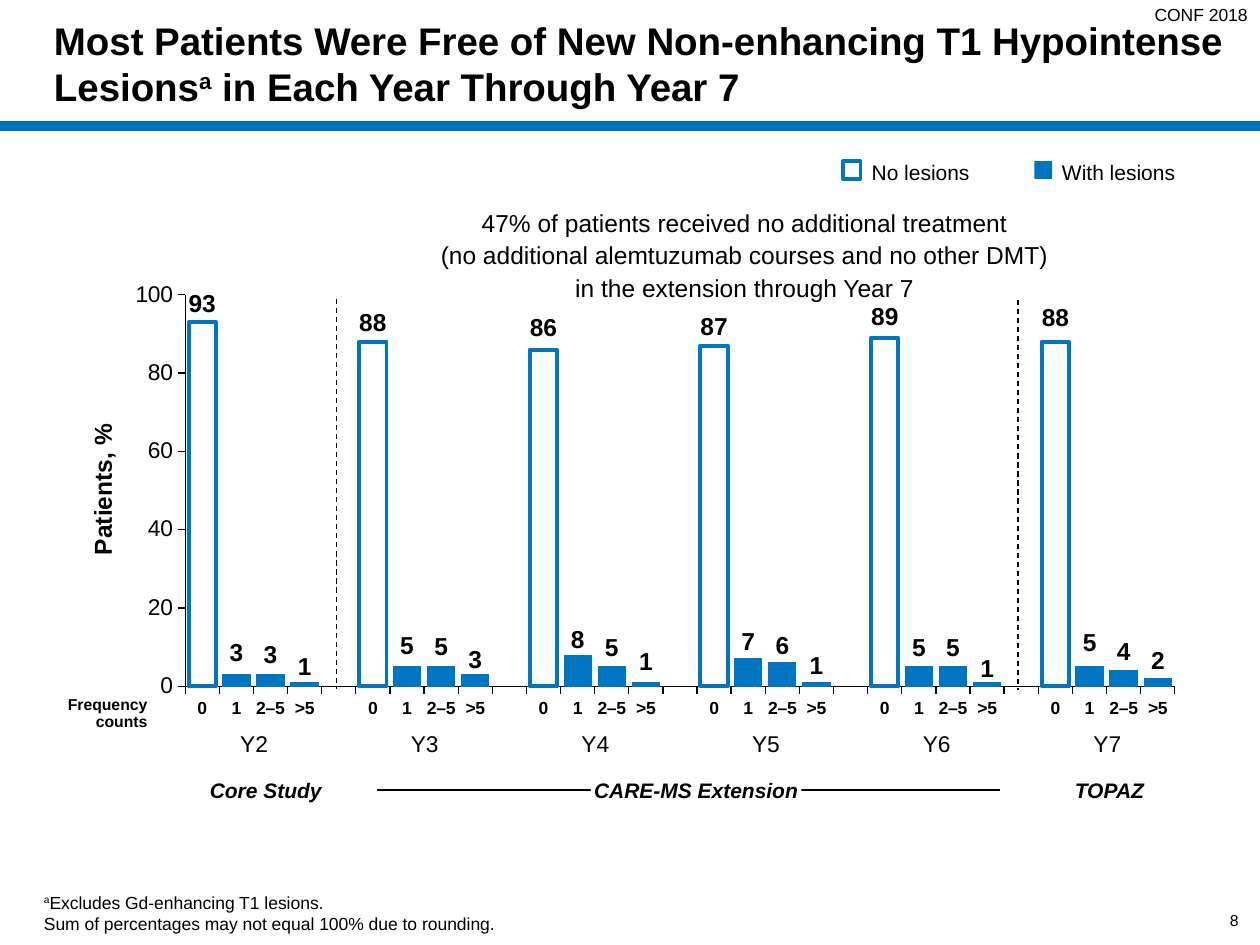
"""Build a slide charting patients free of new T1 hypointense lesions by year."""
from copy import deepcopy
from typing import NamedTuple

from lxml import etree
from pptx import Presentation, util as u
from pptx.chart.data import CategoryChartData
from pptx.dml.color import RGBColor
from pptx.enum import chart as ch, dml, shapes, text
from pptx.oxml.ns import qn

HUES = {"ink": "000000", "paper": "FFFFFF", "bar": "0076C0", "rule": "0070C0"}
FACE = "Arial"
LEFT, PITCH, BASE = 1.47, 0.27086, 5.45
ALIGN = {"l": text.PP_ALIGN.LEFT, "c": text.PP_ALIGN.CENTER, "r": text.PP_ALIGN.RIGHT}
ANCHOR = {"t": text.MSO_ANCHOR.TOP, "m": text.MSO_ANCHOR.MIDDLE, "b": text.MSO_ANCHOR.BOTTOM}


class Box(NamedTuple):
    x: float
    y: float
    w: float
    h: float


class Year(NamedTuple):
    name: str
    vals: tuple
    tops: tuple


class Note(NamedTuple):
    words: str
    box: Box
    size: float
    align: str = "l"
    anchor: str = "t"
    bold: bool = False
    slant: bool = False
    side: float = 0.1
    edge: float = 0.05
    lead: float = 1.0
    turn: int = 0
    fill: str = ""


class Rule(NamedTuple):
    x1: float
    y1: float
    x2: float
    y2: float
    hue: str = "ink"
    width: float = 0.75
    dash: bool = False


YEARS = (
    Year("Y2", (93, 3, 3, 1), (2.24, 5.01, 5.02, 5.12)),
    Year("Y3", (88, 5, 5, 3), (2.39, 4.95, 4.96, 5.06)),
    Year("Y4", (86, 8, 5, 1), (2.43, 4.9, 4.97, 5.08)),
    Year("Y5", (87, 7, 6, 1), (2.42, 4.92, 4.95, 5.11)),
    Year("Y6", (89, 5, 5, 1), (2.34, 4.97, 4.97, 5.13)),
    Year("Y7", (88, 5, 4, 2), (2.35, 4.93, 5.0, 5.07)),
)
COUNTS = ("0", "1", "2–5", ">5")

NOTES = (
    Note("47% of patients received no additional treatment\n"
         "(no additional alemtuzumab courses and no other DMT)\n"
         "in the extension through Year 7", Box(3.26, 1.58, 5.3, 0.9), 14, "c", lead=1.1),
    Note("Most Patients Were Free of New Non-enhancing T1 Hypointense "
         "Lesions^a^ in Each Year Through Year 7", Box(0.33, 0, 9.51, 1), 22,
         anchor="m", bold=True),
    Note("8", Box(7.5, 7.1, 2.33, 0.4), 9, "r", "m", side=0, edge=0),
    Note("CONF 2018", Box(8.43, -0.02, 1.57, 0.27), 10, "r"),
    Note("Frequency\ncounts", Box(0.3, 5.48, 0.87, 0.37), 9, "r", bold=True, side=0, lead=0.9),
    Note("^a^Excludes Gd-enhancing T1 lesions.\n"
         "Sum of percentages may not equal 100% due to rounding.",
         Box(0.25, 7.02, 9.42, 0.44), 10, anchor="b"),
    Note("With lesions", Box(8.33, 1.2, 1.32, 0.31), 12, lead=1.1),
    Note("No lesions", Box(6.82, 1.2, 1.27, 0.31), 12, lead=1.1),
    Note("Patients, %", Box(-0.21, 3.73, 2.07, 0.31), 14, "c", bold=True, side=0,
         lead=0.9, turn=270),
)
STUDIES = (("Core Study", 1.61, 1.0, ""), ("TOPAZ", 8.51, 0.59, "paper"),
           ("CARE-MS Extension", 4.69, 1.67, "paper"))
RULES = (
    Rule(0, 1, 10, 1, "rule", 5.75),
    Rule(2.67, 2.37, 2.67, 5.47, dash=True),
    Rule(8.08, 2.38, 8.08, 5.48, dash=True),
    Rule(2.99, 6.27, 7.94, 6.27),
)


def tint(hue: str) -> RGBColor:
    """Return the named colour."""
    return RGBColor.from_string(HUES[hue])


def span(box: Box) -> list:
    """Return the box in slide lengths."""
    return [u.Inches(v) for v in box]


def assign(item, style: dict) -> None:
    """Set each attribute in the style."""
    for key, val in style.items():
        setattr(item, key, val)


def paint(item, fill: str, line: str = "", width: float = 0) -> None:
    """Give an item a solid fill and an optional line."""
    item.fill.solid()
    item.fill.fore_color.rgb = tint(fill)
    if line:
        item.line.color.rgb = tint(line)
        item.line.width = u.Pt(width)
    else:
        item.line.fill.background()


def ink(font, size: float, bold: bool = False, slant: bool = False) -> None:
    """Style a font."""
    assign(font, {"name": FACE, "size": u.Pt(size), "bold": bold, "italic": slant})
    font.color.rgb = tint("ink")


def write(slide, note: Note) -> None:
    """Add a text box, raising the parts between carets."""
    shape = slide.shapes.add_textbox(*span(note.box))
    shape.rotation = note.turn
    if note.fill:
        paint(shape, note.fill)
    frame = shape.text_frame
    side, edge = u.Inches(note.side), u.Inches(note.edge)
    assign(frame, {"word_wrap": True, "vertical_anchor": ANCHOR[note.anchor],
                   "margin_left": side, "margin_right": side,
                   "margin_top": edge, "margin_bottom": edge})
    para = frame.paragraphs[0]
    assign(para, {"alignment": ALIGN[note.align], "line_spacing": note.lead})
    for row, line in enumerate(note.words.split("\n")):
        if row:
            para.add_line_break()
        for part, words in enumerate(line.split("^")):
            if words:
                run = para.add_run()
                run.text = words
                ink(run.font, note.size, note.bold, note.slant)
                if part % 2:
                    run._r.get_or_add_rPr().set("baseline", "30000")
    for gap in para._p.findall(qn("a:br")):
        gap.append(deepcopy(para.runs[-1]._r.rPr))


def draw(slide, rule: Rule) -> None:
    """Add a straight line."""
    ends = [u.Inches(v) for v in rule[:4]]
    link = slide.shapes.add_connector(shapes.MSO_CONNECTOR.STRAIGHT, *ends)
    link.line.color.rgb = tint(rule.hue)
    link.line.width = u.Pt(rule.width)
    if rule.dash:
        link.line.dash_style = dml.MSO_LINE.DASH
    etree.SubElement(link._element.spPr, qn("a:effectLst"))


def plot(slide) -> None:
    """Add the column chart."""
    data = CategoryChartData(number_format="0")
    data.categories = [c for y in YEARS for c in (*COUNTS, "")][:-1]
    vals = [v for y in YEARS for v in (*y.vals, None)][:-1]
    data.add_series("Series 1", vals)
    chart = slide.shapes.add_chart(ch.XL_CHART_TYPE.COLUMN_CLUSTERED,
                                   *span(Box(0.49, 1.55, 9.07, 4.76)), data).chart
    assign(chart, {"has_legend": False, "has_title": False})
    ink(chart.font, 14, True)
    bars = chart.plots[0]
    assign(bars, {"gap_width": 25, "vary_by_categories": False})
    row = bars.series[0]
    paint(row.format, "bar", "bar", 0.5)
    for i in range(0, len(vals), 5):
        paint(row.points[i].format, "paper", "bar", 2.25)
    for axis, size, bold in ((chart.category_axis, 10, True), (chart.value_axis, 13, False)):
        assign(axis, {"has_major_gridlines": False, "major_tick_mark": ch.XL_TICK_MARK.OUTSIDE})
        ink(axis.tick_labels.font, size, bold)
        axis.format.line.color.rgb = tint("ink")
        axis.format.line.width = u.Pt(0.75)
    assign(chart.value_axis, {"minimum_scale": 0, "maximum_scale": 100, "major_unit": 20})
    assign(chart.value_axis.tick_labels, {"number_format": "#,##0", "number_format_is_linked": False})
    area = chart._chartSpace.chart.plotArea
    for old in area.findall(qn("c:layout")):
        area.remove(old)
    lay = etree.Element(qn("c:layout"))
    area.insert(0, lay)
    man = etree.SubElement(lay, qn("c:manualLayout"))
    for tag, val in (("layoutTarget", "inner"), ("xMode", "edge"), ("yMode", "edge"),
                     ("x", "0.108"), ("y", "0.166"), ("w", "0.866"), ("h", "0.653")):
        etree.SubElement(man, qn("c:" + tag)).set("val", val)


def main() -> None:
    """Build and save the slide."""
    deck = Presentation()
    assign(deck, {"slide_width": u.Inches(10), "slide_height": u.Inches(7.5)})
    slide = deck.slides.add_slide(deck.slide_layouts[6])
    plot(slide)
    for rule in RULES:
        draw(slide, rule)
    for note in NOTES:
        write(slide, note)
    for n, year in enumerate(YEARS):
        start = LEFT + 5 * n * PITCH
        for i, (val, top) in enumerate(zip(year.vals, year.tops)):
            mid = start + (i + 0.5) * PITCH
            write(slide, Note(str(val), Box(mid - 0.23, top, 0.46, 0.34), 14, "c", bold=True))
        write(slide, Note(year.name, Box(start + 2 * PITCH - 0.38, 5.74, 0.77, 0.32), 13, "c"))
    for name, x, wide, fill in STUDIES:
        write(slide, Note(name, Box(x, 6.17, wide, 0.2), 12, "c", "m", True, True, 0, 0, fill=fill))
    for x, fill, line in ((8.21, "bar", ""), (6.69, "paper", "bar")):
        key = slide.shapes.add_shape(shapes.MSO_SHAPE.RECTANGLE, *span(Box(x, 1.28, 0.14, 0.14)))
        key.shadow.inherit = False
        paint(key, fill, line, 2.25)
    deck.save("out.pptx")


if __name__ == "__main__":
    main()
